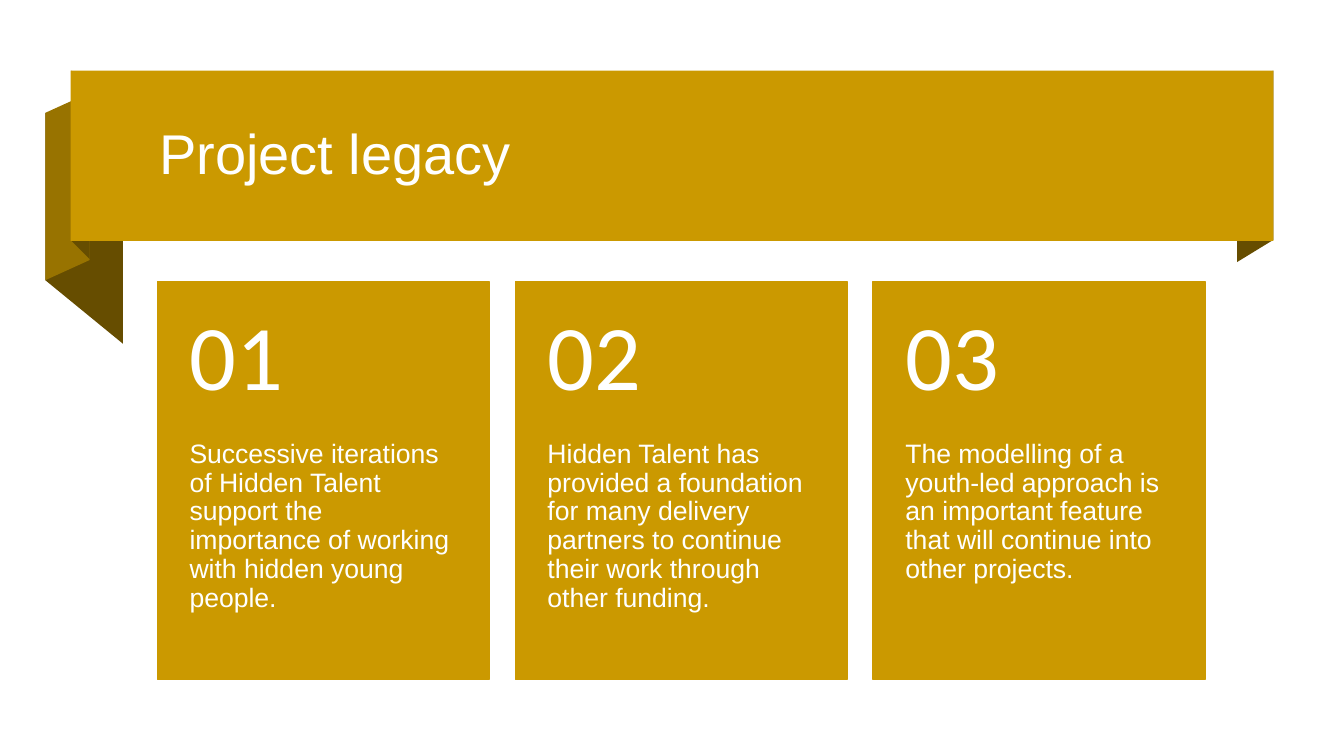
from dataclasses import dataclass

from pptx import Presentation
from pptx import util as u
from pptx.dml.color import RGBColor
from pptx.enum import shapes, text

# Content
TITLE = "Project legacy"
CARDS = [
    "Successive iterations of Hidden Talent support the importance of working "
    "with hidden young people.",
    "Hidden Talent has provided a foundation for many delivery partners to "
    "continue their work through other funding.",
    "The modelling of a youth-led approach is an important feature that will "
    "continue into other projects.",
]


@dataclass(frozen=True)
class Theme:
    gold: str = "CB9900"
    mid: str = "987300"
    dark: str = "664D00"
    white: str = "FFFFFF"
    font: str = "Arial"
    number_font: str = "Calibri"
    title_size: int = 40
    number_size: int = 66
    body_size: int = 19


T = Theme()

# Layout, in inches
BANNER = (0.7, 0.7, 11.93, 1.69)
TITLE_BOX = (1.48, 0.83, 10.94, 1.45)
FOLDS = [
    (T.dark, [(12.63, 2.38), (12.27, 2.6), (12.27, 0.91), (12.63, 0.7)]),
    (T.dark, [(1.22, 3.41), (0.45, 2.78), (0.45, 1.12), (1.22, 1.75)]),
    (T.mid, [(0.89, 2.58), (0.45, 2.78), (0.45, 1.12), (0.89, 0.92)]),
    (T.dark, [(0.89, 2.57), (0.71, 2.39), (0.71, 0.7), (0.89, 0.89)]),
]
CARD_LEFT, CARD_TOP, CARD_W, CARD_H = 1.56, 2.79, 3.29, 3.95
CARD_STEP = 3.55
NUMBER_H = 1.58
PAD = 0.32


def inches(values):
    return [u.Inches(v) for v in values]


def paint(sp, color, outlined=False):
    sp.shadow.inherit = False
    sp.fill.solid()
    sp.fill.fore_color.rgb = RGBColor.from_string(color)
    if outlined:
        sp.line.color.rgb = RGBColor.from_string(color)
        sp.line.width = u.Pt(1)
    else:
        sp.line.fill.background()


def add_rect(s, box, outlined=False):
    sp = s.shapes.add_shape(shapes.MSO_SHAPE.RECTANGLE, *inches(box))
    paint(sp, T.gold, outlined)


def add_fold(s, color, points):
    start, *rest = [inches(pt) for pt in points]
    fb = s.shapes.build_freeform(*start)
    fb.add_line_segments(rest, close=True)
    paint(fb.convert_to_shape(), color)


def write(sp, words, size, font, anchor, insets, after=0):
    tf = sp.text_frame
    tf.text = words
    tf.word_wrap = True
    tf.auto_size = text.MSO_AUTO_SIZE.NONE
    tf.vertical_anchor = anchor
    (tf.margin_left, tf.margin_top,
     tf.margin_right, tf.margin_bottom) = inches(insets)
    p = tf.paragraphs[0]
    p.alignment = text.PP_ALIGN.LEFT
    p.line_spacing = 0.9
    p.space_after = u.Pt(after)
    r = p.runs[0]
    r.font.name = font
    r.font.size = u.Pt(size)
    r.font.color.rgb = RGBColor.from_string(T.white)


def add_banner(s):
    for color, points in FOLDS:
        add_fold(s, color, points)
    add_rect(s, BANNER)
    # Bring the title in front of the ribbon
    title = s.shapes.title
    s.shapes.element.append(title.element)
    title.left, title.top, title.width, title.height = inches(TITLE_BOX)
    write(title, TITLE, T.title_size, T.font, text.MSO_ANCHOR.MIDDLE,
          (0.1, 0.05, 0.1, 0.05))


def add_card(s, i, words):
    left = CARD_LEFT + i * CARD_STEP
    add_rect(s, (left, CARD_TOP, CARD_W, CARD_H), outlined=True)
    body = s.shapes.add_textbox(
        *inches((left, CARD_TOP + NUMBER_H, CARD_W, CARD_H - NUMBER_H)))
    write(body, words, T.body_size, T.font, text.MSO_ANCHOR.TOP,
          (PAD, 0, PAD, 0.36), after=0.35 * T.body_size)
    number = s.shapes.add_textbox(*inches((left, CARD_TOP, CARD_W, NUMBER_H)))
    write(number, f"{i + 1:02}", T.number_size, T.number_font,
          text.MSO_ANCHOR.MIDDLE, (PAD, 0.18, PAD, 0.18),
          after=0.35 * T.number_size)


def main():
    prs = Presentation()
    prs.slide_width, prs.slide_height = inches((13.33, 7.5))
    s = prs.slides.add_slide(prs.slide_layouts[5])
    add_banner(s)
    for i, words in enumerate(CARDS):
        add_card(s, i, words)
    prs.save("out.pptx")


if __name__ == "__main__":
    main()
